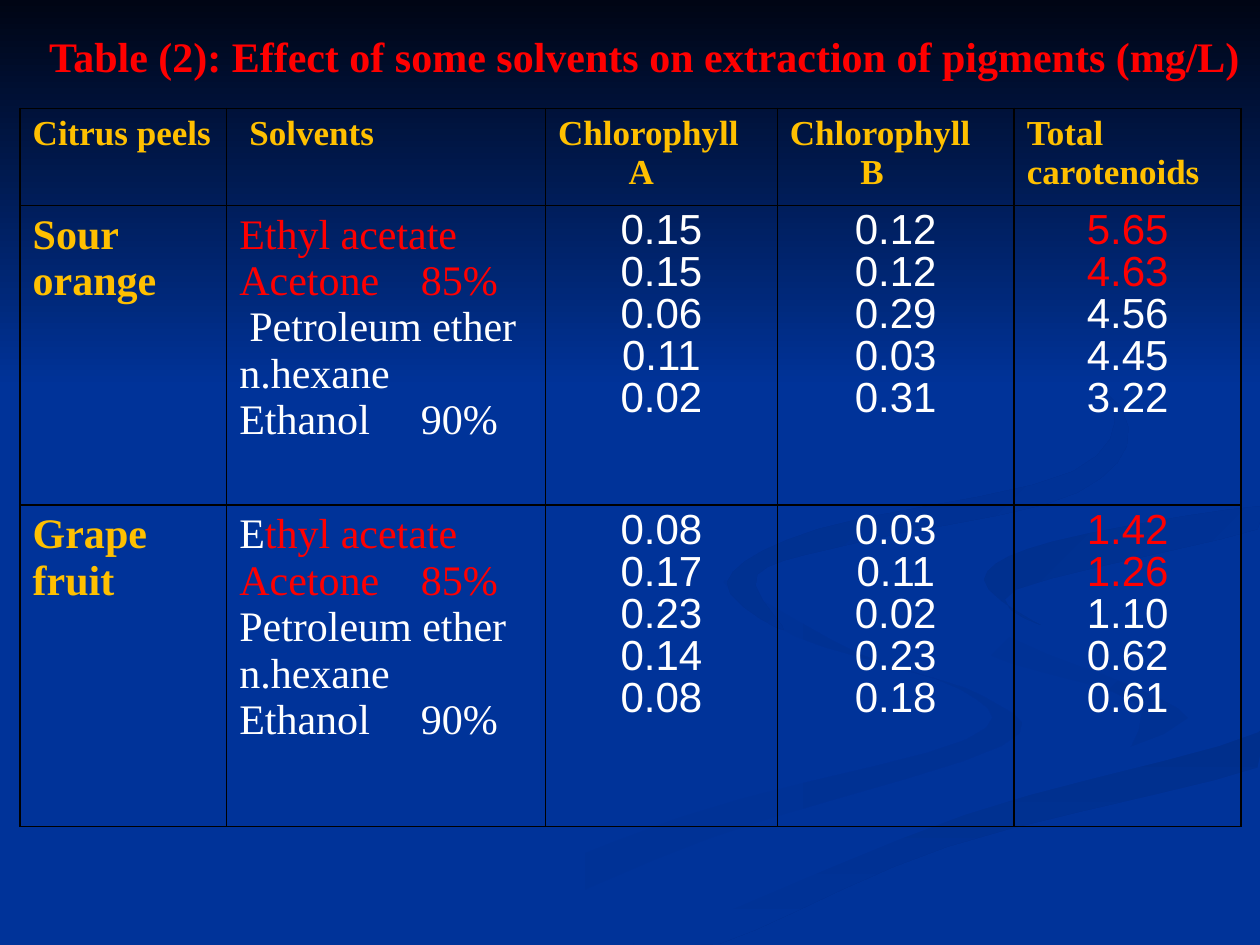
from lxml.etree import SubElement
from pptx import Presentation
from pptx.dml.color import RGBColor
from pptx.enum.shapes import MSO_SHAPE as Shape
from pptx.enum.text import MSO_ANCHOR as Anchor, PP_ALIGN as Align
from pptx.oxml.ns import qn
from pptx.util import Inches, Pt

BLUE = RGBColor(0x00, 0x33, 0x99)
NIGHT = RGBColor(0x00, 0x05, 0x14)
BLUE_SHADE = RGBColor(0x00, 0x31, 0x93)
BLUE_DEEP = RGBColor(0x00, 0x2F, 0x8C)
RED = RGBColor(0xFF, 0x00, 0x00)
GOLD = RGBColor(0xFF, 0xC0, 0x00)
WHITE = RGBColor(0xFF, 0xFF, 0xFF)

WIDTH, HEIGHT = 10, 7.5
CURVE_STEPS = 5

# Background swirls: start colour, end colour, clockwise angle, points on the curve
SWIRLS = [
    (BLUE, BLUE_SHADE, 0, [
        (7.81, 5.53), (6.82, 5.19), (5.75, 4.6), (6.31, 5.05), (7.62, 5.47),
        (7.67, 5.87), (5.39, 6.49), (3, 7.49), (3.61, 7.49), (5.64, 6.65), (7.95, 5.92)]),
    (BLUE, BLUE_SHADE, 45, [
        (9.43, 5.7), (8.5, 5.24), (7.24, 4.64), (7.81, 5.18), (9, 5.57), (8.94, 6.05)]),
    (BLUE_DEEP, BLUE, 90, [
        (5.03, 7.49), (5.71, 7.49), (7.52, 6.72), (9.98, 6.09), (9.98, 5.81),
        (7.64, 6.47), (6.3, 6.93)]),
    (BLUE, BLUE, 0, [
        (7.25, 4.64), (8.31, 5.19), (9.43, 5.7), (7.43, 6.43), (4.77, 7.49), (5.19, 7.47),
        (7.65, 6.47), (9.99, 5.81), (9.99, 5.38), (7.81, 4.63), (9.99, 4.02), (9.99, 3.87),
        (7.88, 4.22)]),
    (BLUE_DEEP, BLUE, 45, [
        (7.81, 4.6), (8.26, 4.96), (8.06, 4.68), (9.98, 4.2), (9.98, 4.02), (8.35, 4.3)]),
    (BLUE_DEEP, BLUE, 45, [
        (6.83, 4.3), (8.55, 3.91), (8.9, 3.24), (7.62, 2.33), (8.76, 3.06), (8.52, 3.74),
        (6.49, 4.2), (5.77, 4.62), (6.22, 5), (6.01, 4.56)]),
]

COLUMN_WIDTHS = [1.64, 2.53, 1.84, 1.88, 1.8]
ROW_HEIGHTS = [0.77, 2.38, 2.55]
SMALL_INDENT, LETTER_INDENT, PERCENT_TAB = 0.08, 0.56, 1.44

# Each header line: text, indent
HEADERS = [
    [("Citrus peels", 0)],
    [("Solvents", SMALL_INDENT)],
    [("Chlorophyll", 0), ("A", LETTER_INDENT)],
    [("Chlorophyll", 0), ("B", LETTER_INDENT)],
    [("Total carotenoids", 0)],
]
SOLVENTS = ["Ethyl acetate", "Acetone\t85%", "Petroleum ether", "n.hexane", "Ethanol\t90%"]
PEELS = [
    ("Sour orange", [
        ["0.15", "0.15", "0.06", "0.11", "0.02"],
        ["0.12", "0.12", "0.29", "0.03", "0.31"],
        ["5.65", "4.63", "4.56", "4.45", "3.22"]]),
    ("Grape fruit", [
        ["0.08", "0.17", "0.23", "0.14", "0.08"],
        ["0.03", "0.11", "0.02", "0.23", "0.18"],
        ["1.42", "1.26", "1.10", "0.62", "0.61"]]),
]


def spline(a, b, c, d, t):
    """Catmull-Rom value between b and c."""
    return b + t / 2 * (c - a + t * (2 * a - 5 * b + 4 * c - d + t * (3 * (b - c) + d - a)))


def smooth_outline(points):
    """Closed curve through the points, kept on the slide."""
    outline = []
    for i in range(len(points)):
        near = [points[(i + k) % len(points)] for k in (-1, 0, 1, 2)]
        for step in range(CURVE_STEPS):
            x, y = (spline(*axis, step / CURVE_STEPS) for axis in zip(*near))
            outline.append((Inches(min(x, WIDTH)), Inches(min(y, HEIGHT))))
    return outline


class SlideWriter:
    font = "Times New Roman"
    digit_font = "Arial"

    def __init__(self, slide):
        self.slide = slide
        slide.background.fill.solid()
        slide.background.fill.fore_color.rgb = BLUE

    def gradient(self, shape, start, end, angle):
        shape.shadow.inherit = False
        shape.line.fill.background()
        shape.fill.gradient()
        shape.fill.gradient_angle = (360 - angle) % 360
        for stop, color in zip(shape.fill.gradient_stops, (start, end)):
            stop.color.rgb = color

    def swirl(self, start, end, angle, points):
        first, *rest = smooth_outline(points)
        builder = self.slide.shapes.build_freeform(*first)
        builder.add_line_segments(rest, close=True)
        self.gradient(builder.convert_to_shape(), start, end, angle)

    def sky(self, height):
        band = self.slide.shapes.add_shape(Shape.RECTANGLE, 0, 0, Inches(WIDTH), Inches(height))
        self.gradient(band, NIGHT, BLUE, 90)

    def title(self, text):
        box = self.slide.shapes.add_textbox(0, Inches(0.16), Inches(WIDTH), Inches(0.86))
        frame = box.text_frame
        frame.word_wrap = True
        frame.vertical_anchor = Anchor.TOP
        frame.margin_left, frame.margin_right = Inches(0.25), Inches(0.02)
        frame.margin_top, frame.margin_bottom = Inches(0.08), 0
        self.line(frame, 0, [(text, RED)], bold=True, align=Align.CENTER)

    def line(self, frame, index, runs, size=24, bold=False, align=Align.LEFT, indent=0, digits=False):
        paragraph = frame.paragraphs[0] if index == 0 else frame.add_paragraph()
        paragraph.alignment = align
        properties = paragraph._p.get_or_add_pPr()
        properties.set("marL", str(Inches(indent)))
        if digits:
            properties.set("rtl", "1")
            paragraph.line_spacing = Pt(size)
        if any("\t" in text for text, _ in runs):
            tabs = SubElement(properties, qn("a:tabLst"))
            SubElement(tabs, qn("a:tab"), pos=str(Inches(PERCENT_TAB)), algn="l")
        font = paragraph.font
        font.name, font.size, font.bold = self.font, Pt(size), bold
        complex_font = self.digit_font if digits else self.font
        SubElement(properties.find(qn("a:defRPr")), qn("a:cs"), typeface=complex_font)
        for text, color in runs:
            run = paragraph.add_run()
            run.text = text
            run.font.color.rgb = color

    def table(self, left, top, widths, heights):
        grid = self.slide.shapes.add_table(
            len(heights), len(widths), Inches(left), Inches(top),
            Inches(sum(widths)), Inches(sum(heights))).table
        grid.first_row = grid.horz_banding = False
        for column, width in zip(grid.columns, widths):
            column.width = Inches(width)
        for row, height in zip(grid.rows, heights):
            row.height = Inches(height)
        for cell in grid.iter_cells():
            properties = cell._tc.get_or_add_tcPr()
            for side in ("lnL", "lnR", "lnT", "lnB"):
                border = SubElement(properties, qn(f"a:{side}"), w=str(Pt(1)))
                SubElement(SubElement(border, qn("a:solidFill")), qn("a:srgbClr"), val="000000")
            cell.fill.background()
        return grid


def main():
    deck = Presentation()
    deck.slide_width, deck.slide_height = Inches(WIDTH), Inches(HEIGHT)
    writer = SlideWriter(deck.slides.add_slide(deck.slide_layouts[6]))

    # Background
    for swirl in SWIRLS:
        writer.swirl(*swirl)
    writer.sky(3.08)

    writer.title("Table (2): Effect of some solvents on extraction of pigments (mg/L)")

    # Table header
    pigments = writer.table(0.16, 0.86, COLUMN_WIDTHS, ROW_HEIGHTS)
    for column, header in enumerate(HEADERS):
        for index, (text, indent) in enumerate(header):
            writer.line(pigments.cell(0, column).text_frame, index, [(text, GOLD)],
                        size=20, bold=True, indent=indent)

    # One row per peel; the two best solvents are red
    for row, (peel, measures) in enumerate(PEELS, start=1):
        writer.line(pigments.cell(row, 0).text_frame, 0, [(peel, GOLD)], bold=True)
        for index, solvent in enumerate(SOLVENTS):
            best = RED if index < 2 else WHITE
            runs = [(solvent, best)]
            if row == 2 and index == 0:
                runs = [(solvent[0], WHITE), (solvent[1:], RED)]
            indent = SMALL_INDENT if row == 1 and index == 2 else 0
            writer.line(pigments.cell(row, 1).text_frame, index, runs, indent=indent)
            for column, values in enumerate(measures, start=2):
                color = best if column == 4 else WHITE
                writer.line(pigments.cell(row, column).text_frame, index,
                            [(values[index], color)], align=Align.CENTER, digits=True)

    deck.save("out.pptx")


if __name__ == "__main__":
    main()
